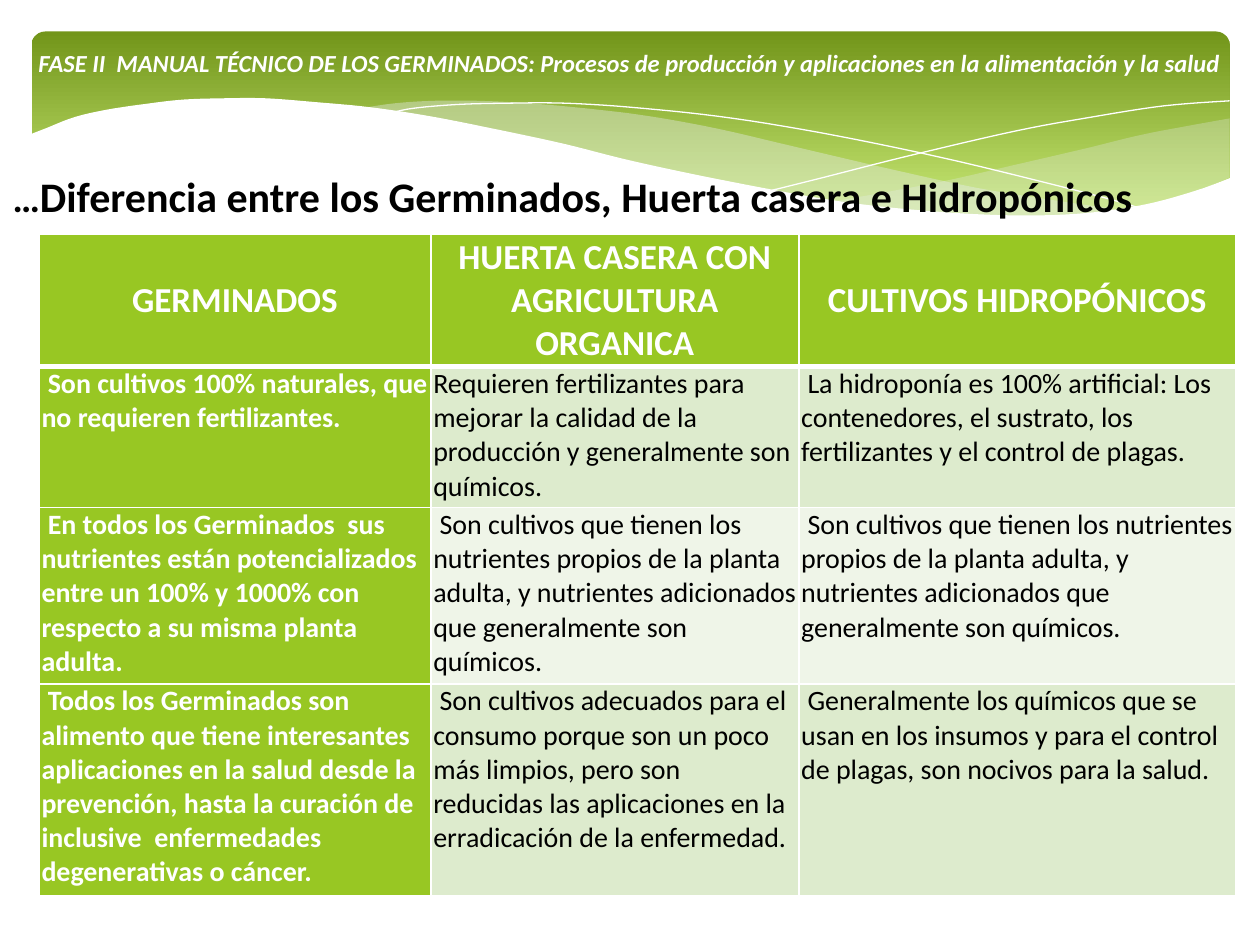
from lxml import etree
from pptx import Presentation
from pptx import util as u
from pptx.dml import color
from pptx.enum import shapes, text
from pptx.oxml import ns

PX = 9144  # EMU per px, 100 px to the inch
GREEN, WHITE, BLACK, MIST = "98C723", "FFFFFF", "000000", "E7ECED"
BANDS = ["DDEBCD", "EFF5E8"]
MIDDLE, TOP = text.MSO_ANCHOR.MIDDLE, text.MSO_ANCHOR.TOP
CENTER, LEFT = text.PP_ALIGN.CENTER, text.PP_ALIGN.LEFT

# Waves relative to the banner: each is a list of smooth edges, joined at corners
WAVE_RIGHT = [
    [(951, 69), (923, 74), (881, 82), (836, 93), (780, 106), (728, 118),
     (681, 127), (636, 135)],
    [(636, 135), (680, 140), (732, 145), (778, 147), (819, 146), (856, 142),
     (896, 135), (924, 127), (951, 116)],
]
WAVE_LEFT = [
    [(868, 142), (812, 134), (750, 124), (681, 109), (604, 91), (544, 77),
     (489, 67), (440, 61), (395, 57), (355, 55), (319, 55), (288, 57), (261, 61)],
    [(261, 61), (317, 69), (379, 81), (466, 101), (541, 118), (609, 131),
     (670, 140), (723, 145), (771, 148), (813, 147), (851, 144), (868, 142)],
]
LINE_DOWN = [[(284, 65), (303, 61), (338, 58), (376, 57), (425, 57), (485, 61),
              (557, 69), (640, 83), (735, 103), (844, 130), (882, 141)]]
LINE_UP = [[(588, 126), (628, 116), (695, 99), (781, 79), (841, 68), (899, 59),
            (951, 55)]]
WHITE_WAVE = [
    [(952, 116), (925, 126), (885, 137), (838, 144), (784, 146), (719, 143),
     (643, 135), (554, 119), (478, 103), (422, 89), (366, 77), (315, 67),
     (268, 60), (225, 56), (186, 53), (152, 53), (121, 54), (94, 57), (60, 62),
     (34, 68), (11, 77), (-2, 82)],
    [(-2, 82), (-2, 199)],
    [(-2, 199), (952, 199)],
]

ROWS = [
    ["GERMINADOS", "HUERTA CASERA CON AGRICULTURA ORGANICA", "CULTIVOS HIDROPÓNICOS"],
    [" Son cultivos 100% naturales, que no requieren fertilizantes.",
     "Requieren fertilizantes para mejorar la calidad de la producción y generalmente "
     "son químicos.",
     " La hidroponía es 100% artificial: Los contenedores, el sustrato, los "
     "fertilizantes y el control de plagas."],
    [" En todos los Germinados  sus nutrientes están potencializados entre un 100% y "
     "1000% con respecto a su misma planta adulta.",
     *[" Son cultivos que tienen los nutrientes propios de la planta adulta, y "
       "nutrientes adicionados que generalmente son químicos."] * 2],
    [" Todos los Germinados son alimento que tiene interesantes aplicaciones en la "
     "salud desde la prevención, hasta la curación de inclusive  enfermedades "
     "degenerativas o cáncer.",
     " Son cultivos adecuados para el consumo porque son un poco más limpios, pero "
     "son reducidas las aplicaciones en la erradicación de la enfermedad.",
     " Generalmente los químicos que se usan en los insumos y para el control de "
     "plagas, son nocivos para la salud."],
]


def rgb(value):
    return color.RGBColor.from_string(value)


def px(*values):
    return [u.Emu(round(v * PX)) for v in values]


def set_attrs(obj, **values):
    for name, value in values.items():
        setattr(obj, name, value)


def add_run(p, words, size, hue, **style):
    r = p.add_run()
    r.text = words
    set_attrs(r.font, name="Calibri", size=u.Pt(size), **style)
    r.font.color.rgb = rgb(hue)


def smooth(points, steps=6):
    """Points of a Catmull-Rom curve through the given points, without the first."""
    ends = [points[0], *points, points[-1]]
    curve = []
    for a, b, c, d in zip(ends, ends[1:], ends[2:], ends[3:]):
        for t in (i / steps for i in range(1, steps + 1)):
            curve.append(tuple(
                (2 * q + (r - p) * t + (2 * p - 5 * q + 4 * r - s) * t ** 2
                 + (3 * q - p - 3 * r + s) * t ** 3) / 2
                for p, q, r, s in zip(a, b, c, d)))
    return curve


def add_wave(s, left, top, edges, fill=None, opacity=100):
    """A filled wave, or a hairline when there is no fill."""
    points = [edges[0][0]] + [pt for edge in edges for pt in smooth(edge)]
    points = [px(left + x, top + y) for x, y in points]
    builder = s.shapes.build_freeform(*points[0])
    builder.add_line_segments(points[1:], close=fill is not None)
    sp = builder.convert_to_shape()
    sp.shadow.inherit = False
    if fill is None:
        sp.fill.background()
        sp.line.color.rgb = rgb(WHITE)
        sp.line.width = 0
        return
    sp.line.fill.background()
    sp.fill.solid()
    sp.fill.fore_color.rgb = rgb(fill)
    if opacity < 100:
        clr = sp.element.spPr.find(".//" + ns.qn("a:srgbClr"))
        etree.SubElement(clr, ns.qn("a:alpha"), val=str(opacity * 1000))


def add_banner(s, left, top, width, height):
    sp = s.shapes.add_shape(shapes.MSO_SHAPE.ROUNDED_RECTANGLE,
                            *px(left, top, width, height))
    sp.adjustments[0] = 0.07
    sp.shadow.inherit = False
    sp.line.fill.background()
    sp.fill.gradient()
    sp.fill.gradient_angle = 270
    for stop, hue, position in zip(sp.fill.gradient_stops, ["72951A", "C5E672"], [0, 0.9]):
        stop.color.rgb = rgb(hue)
        stop.position = position
    add_wave(s, left, top, WAVE_RIGHT, MIST, 29)
    add_wave(s, left, top, WAVE_LEFT, MIST, 40)
    add_wave(s, left, top, LINE_DOWN)
    add_wave(s, left, top, LINE_UP)
    add_wave(s, left, top, WHITE_WAVE, WHITE)


def place_text(sp, box, anchor, align):
    """Move a placeholder in front of the banner and return its paragraph."""
    set_attrs(sp, **dict(zip(["left", "top", "width", "height"], px(*box))))
    sp.element.getparent().append(sp.element)
    tf = sp.text_frame
    set_attrs(tf, word_wrap=True, auto_size=text.MSO_AUTO_SIZE.NONE,
              vertical_anchor=anchor)
    p = tf.paragraphs[0]
    set_attrs(p, alignment=align, space_before=u.Pt(0))
    return p


def add_title(s, *box):
    p = place_text(s.shapes.title, box, MIDDLE, CENTER)
    add_run(p, "FASE II  MANUAL TÉCNICO DE LOS GERMINADOS: Procesos de producción y "
            "aplicaciones en la alimentación y la salud", 14, WHITE, bold=True, italic=True)


def add_heading(s, *box):
    p = place_text(s.placeholders[1], box, TOP, LEFT)
    pPr = p._p.get_or_add_pPr()
    pPr.set("marL", "0")
    pPr.set("indent", "0")
    etree.SubElement(pPr, ns.qn("a:buNone"))
    add_run(p, "…", 22, BLACK, bold=True)
    add_run(p, "Diferencia entre los Germinados, Huerta casera e Hidropónicos",
            24, BLACK, bold=True)


def add_borders(cell, **widths):
    tcPr = cell._tc.get_or_add_tcPr()
    for side, width in widths.items():
        ln = etree.SubElement(tcPr, ns.qn("a:ln" + side), w=str(u.Pt(width)))
        fill = etree.SubElement(ln, ns.qn("a:solidFill"))
        etree.SubElement(fill, ns.qn("a:srgbClr"), val=WHITE)


def add_comparison(s, left, top, widths, heights):
    box = px(left, top, sum(widths), sum(heights))
    table = s.shapes.add_table(len(heights), len(widths), *box).table
    for col, width in zip(table.columns, px(*widths)):
        col.width = width
    for row, height in zip(table.rows, px(*heights)):
        row.height = height
    for i, row in enumerate(ROWS):
        for j, words in enumerate(row):
            head, strong = i == 0, i == 0 or j == 0
            cell = table.cell(i, j)
            add_borders(cell, L=1, R=1, T=3 if i == 1 else 1, B=3 if head else 1)
            cell.fill.solid()
            cell.fill.fore_color.rgb = rgb(GREEN if strong else BANDS[(i - 1) % 2])
            set_attrs(cell, margin_left=2 * PX, margin_right=2 * PX, margin_top=0,
                      margin_bottom=0, vertical_anchor=MIDDLE if head else TOP)
            p = cell.text_frame.paragraphs[0]
            p.alignment = CENTER if head else LEFT
            add_run(p, words, 20 if head else 16, WHITE if strong else BLACK, bold=strong)


def main():
    prs = Presentation()
    prs.slide_width, prs.slide_height = px(1000, 750)
    s = prs.slides.add_slide(prs.slide_layouts[1])
    add_banner(s, 25, 25, 951, 156)
    add_title(s, 0, 0, 1000, 99)
    add_heading(s, 0, 130, 1000, 50)
    add_comparison(s, 31, 186, [311, 292, 347], [105, 112, 140, 168])
    prs.save("out.pptx")


if __name__ == "__main__":
    main()
